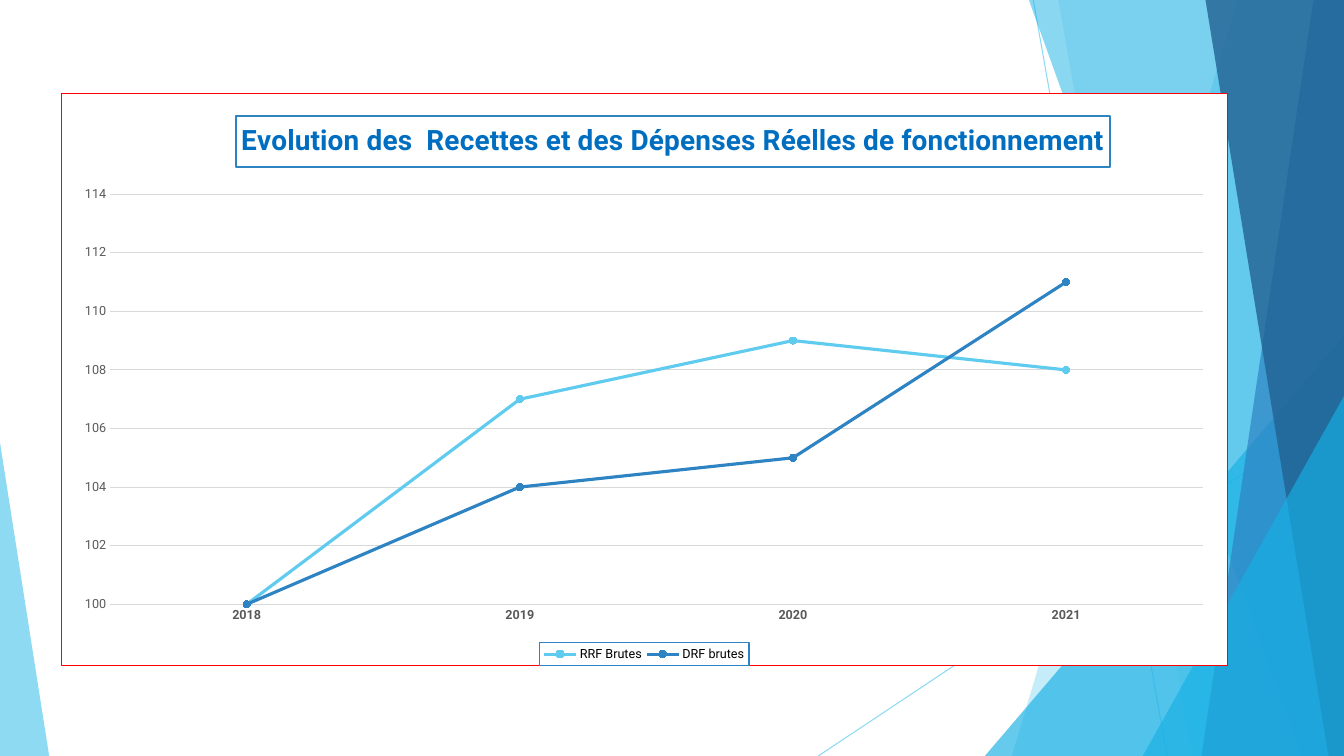
from dataclasses import dataclass

from lxml import etree
from pptx import Presentation
from pptx import util as u
from pptx.chart import data as chart_data
from pptx.dml.color import RGBColor
from pptx.enum import chart as ch
from pptx.enum import shapes
from pptx.oxml import parse_xml
from pptx.oxml.ns import nsdecls, qn


@dataclass(frozen=True)
class Theme:
    font: str = "Roboto"
    sky: str = "5FCBEF"
    cyan: str = "17B0E4"
    blue: str = "2E83C3"
    navy: str = "226292"
    title: str = "006EC0"
    label: str = "595959"
    grid: str = "D9D9D9"
    frame: str = "FF0000"
    paper: str = "FFFFFF"
    ink: str = "000000"
    title_size: int = 20
    base_size: int = 10
    label_size: int = 9


@dataclass(frozen=True)
class Ray:
    start: tuple[float, float]
    end: tuple[float, float]


@dataclass(frozen=True)
class Band:
    """Full-height facet whose right side is the slide edge."""
    top_left: float
    bottom_left: float
    color: str
    opacity: int


@dataclass(frozen=True)
class Wedge:
    left: float
    top: float
    width: float
    apex: float
    color: str
    opacity: int


@dataclass(frozen=True)
class Series:
    name: str
    values: tuple[int, ...]
    color: str


THEME = Theme()
WIDTH, HEIGHT = 33.87, 19.05
RAYS = (Ray((26.04, 0), (29.41, HEIGHT)), Ray((WIDTH, 10.24), (20.62, HEIGHT)))
FACETS = (
    Band(31.19, 25.5, THEME.sky, 36),
    Band(26.67, 30.05, THEME.sky, 20),
    Wedge(24.82, 8.46, 9.05, 1, THEME.cyan, 66),
    Band(25.93, 32.79, THEME.cyan, 50),
    Band(33.1, 30.28, THEME.blue, 70),
    Band(30.38, 33.48, THEME.navy, 80),
    Wedge(28.8, 9.98, 5.07, 1, THEME.cyan, 66),
    Wedge(0, 11.15, 1.24, 0, THEME.sky, 70),
)
YEARS = ("2018", "2019", "2020", "2021")
SERIES = (
    Series("RRF Brutes", (100, 107, 109, 108), THEME.sky),
    Series("DRF brutes", (100, 104, 105, 111), THEME.blue),
)
TITLE = "Evolution des  Recettes et des Dépenses Réelles de fonctionnement"


def rgb(color: str) -> RGBColor:
    return RGBColor.from_string(color)


def set_opacity(shape, percent: int) -> None:
    for color in shape._element.spPr.iter(qn("a:srgbClr")):
        etree.SubElement(color, qn("a:alpha"), val=str(percent * 1000))


def set_line(line, color: str, width: float) -> None:
    line.color.rgb = rgb(color)
    line.width = u.Pt(width)


def set_font(font, size: int, color: str, bold: bool = False) -> None:
    font.name, font.size, font.bold = THEME.font, u.Pt(size), bold
    font.color.rgb = rgb(color)


def draw_ray(page, ray: Ray) -> None:
    line = page.shapes.add_connector(
        shapes.MSO_CONNECTOR.STRAIGHT, *map(u.Cm, ray.start + ray.end))
    set_line(line.line, THEME.sky, 0.75)
    set_opacity(line, 70)
    etree.SubElement(line._element.spPr, qn("a:effectLst"))


def draw_facet(page, facet: Band | Wedge) -> None:
    if isinstance(facet, Band):
        builder = page.shapes.build_freeform(u.Cm(facet.top_left), 0)
        corners = ((WIDTH, 0), (WIDTH, HEIGHT), (facet.bottom_left, HEIGHT))
        builder.add_line_segments([(u.Cm(x), u.Cm(y)) for x, y in corners])
        shape = builder.convert_to_shape()
    else:
        shape = page.shapes.add_shape(
            shapes.MSO_SHAPE.ISOSCELES_TRIANGLE, u.Cm(facet.left), u.Cm(facet.top),
            u.Cm(facet.width), u.Cm(HEIGHT - facet.top))
        shape.adjustments[0] = facet.apex
    shape.shadow.inherit = False
    shape.fill.solid()
    shape.fill.fore_color.rgb = rgb(facet.color)
    shape.line.fill.background()
    set_opacity(shape, facet.opacity)


def place(element, inner: bool = False, **fractions: float) -> None:
    """Give a chart part a manual layout in fractions of the chart area."""
    for old in element.findall(qn("c:layout")):
        element.remove(old)
    target = '<c:layoutTarget val="inner"/>' if inner else ""
    modes = "".join(f'<c:{key}Mode val="edge"/>' for key in "xy")
    sizes = "".join(f'<c:{key} val="{value}"/>' for key, value in fractions.items())
    layout = parse_xml(f'<c:layout {nsdecls("c")}><c:manualLayout>{target}{modes}{sizes}'
                       '</c:manualLayout></c:layout>')
    overlay = element.find(qn("c:overlay"))
    if overlay is None:
        element.insert(0, layout)
    else:
        overlay.addprevious(layout)


def box_properties(fill: str, line: str, width: float):
    return parse_xml(
        f'<c:spPr {nsdecls("c", "a")}><a:solidFill><a:srgbClr val="{fill}"/></a:solidFill>'
        f'<a:ln w="{u.Pt(width)}"><a:solidFill><a:srgbClr val="{line}"/></a:solidFill>'
        '</a:ln></c:spPr>')


def style_axes(chart) -> None:
    years, index = chart.category_axis, chart.value_axis
    for axis in (years, index):
        axis.major_tick_mark = axis.minor_tick_mark = ch.XL_TICK_MARK.NONE
        set_font(axis.tick_labels.font, THEME.label_size, THEME.label, axis is years)
    set_line(years.format.line, THEME.grid, 0.75)
    index.format.line.fill.background()
    index.minimum_scale, index.maximum_scale, index.major_unit = 100, 115, 2
    set_line(index.major_gridlines.format.line, THEME.grid, 0.75)


def style_title(chart) -> None:
    title = chart.chart_title
    para = title.text_frame.paragraphs[0]
    para.text = TITLE
    set_font(para.font, THEME.title_size, THEME.title, True)
    set_line(title.format.line, THEME.blue, 1.5)
    title.include_in_layout = False
    place(title._element, x=0.15, y=0.04)


def style_legend(chart) -> None:
    chart.has_legend = True
    legend = chart.legend
    legend.position = ch.XL_LEGEND_POSITION.BOTTOM
    legend.include_in_layout = False
    set_font(legend.font, THEME.label_size, THEME.ink)
    place(legend._element, x=0.41, y=0.96, w=0.18, h=0.04)
    legend._element.find(qn("c:overlay")).addnext(
        box_properties(THEME.paper, THEME.blue, 1))


def draw_chart(page) -> None:
    data = chart_data.CategoryChartData()
    data.categories = YEARS
    for series in SERIES:
        data.add_series(series.name, series.values)
    chart = page.shapes.add_chart(
        ch.XL_CHART_TYPE.LINE_MARKERS, u.Cm(1.53), u.Cm(2.34), u.Cm(29.41), u.Cm(14.45),
        data).chart
    set_font(chart.font, THEME.base_size, THEME.ink)
    chart._chartSpace.find(qn("c:chart")).addnext(
        box_properties(THEME.paper, THEME.frame, 0.75))
    style_title(chart)
    style_axes(chart)
    style_legend(chart)
    place(chart._chartSpace.chart.plotArea, inner=True, x=0.042, y=0.125, w=0.937, h=0.768)
    chart.plots[0].vary_by_categories = False
    for plotted, series in zip(chart.plots[0].series, SERIES):
        plotted.smooth = False
        set_line(plotted.format.line, series.color, 2.25)
        marker = plotted.marker
        marker.style, marker.size = ch.XL_MARKER_STYLE.CIRCLE, 5
        marker.format.fill.solid()
        marker.format.fill.fore_color.rgb = rgb(series.color)
        set_line(marker.format.line, series.color, 0.75)


def main() -> None:
    deck = Presentation()
    deck.slide_width, deck.slide_height = u.Cm(WIDTH), u.Cm(HEIGHT)
    page = deck.slides.add_slide(deck.slide_layouts[6])
    for ray in RAYS:
        draw_ray(page, ray)
    for facet in FACETS:
        draw_facet(page, facet)
    draw_chart(page)
    deck.save("out.pptx")


if __name__ == "__main__":
    main()
